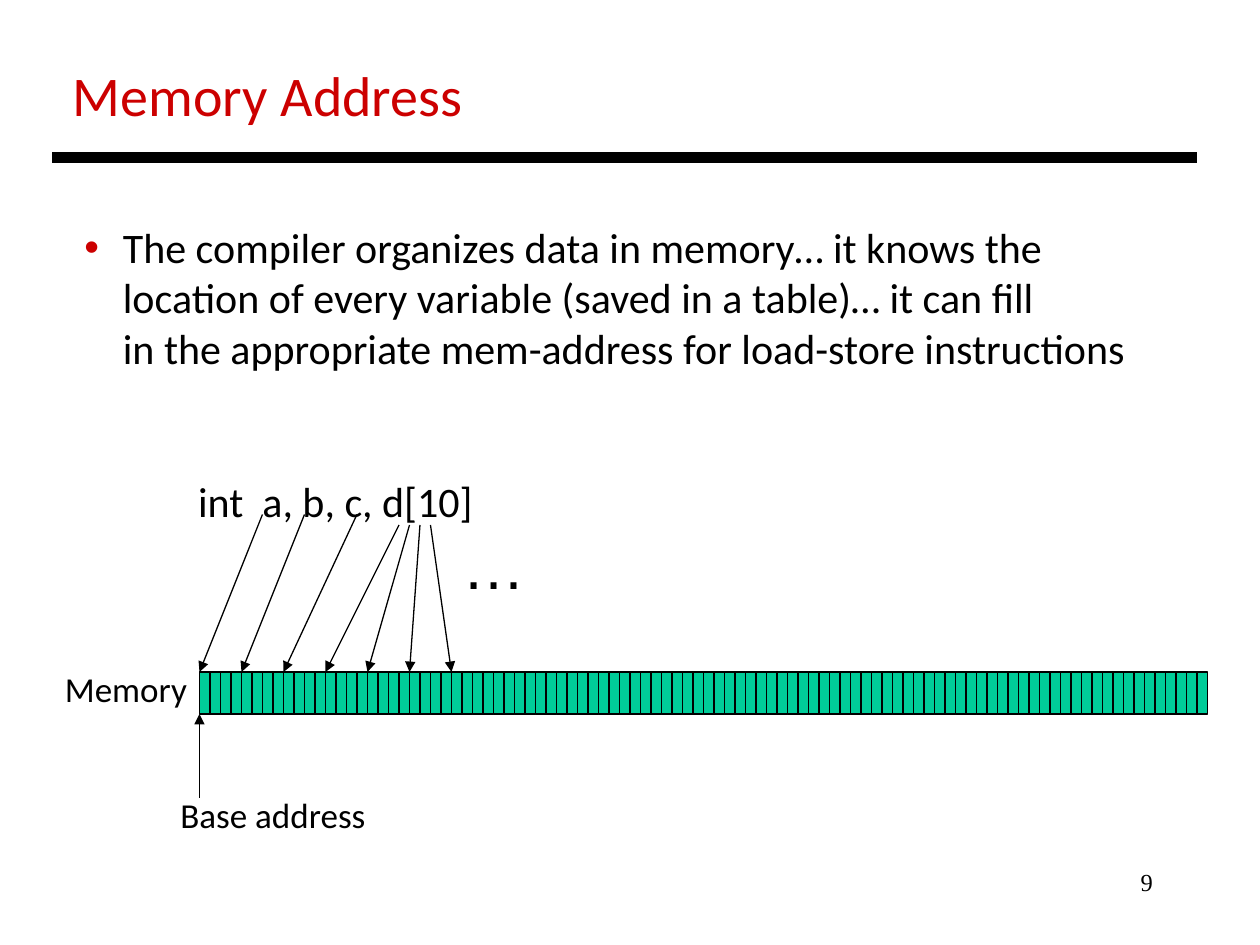
from lxml import etree
from pptx import Presentation
from pptx.dml.color import RGBColor
from pptx.enum.shapes import MSO_CONNECTOR, MSO_SHAPE
from pptx.enum.text import MSO_ANCHOR, MSO_AUTO_SIZE, PP_ALIGN
from pptx.oxml.ns import qn
from pptx.util import Pt

LINE = MSO_CONNECTOR.STRAIGHT
RECT = MSO_SHAPE.RECTANGLE
TOP = MSO_ANCHOR.TOP
FIXED = MSO_AUTO_SIZE.NONE
LEFT, RIGHT = PP_ALIGN.LEFT, PP_ALIGN.RIGHT
BLACK, RED, GREEN = "000000", "CC0000", "00CC99"

color = RGBColor.from_string


def write(box, area, lines, size, font="Calibri", ink=BLACK, align=LEFT):
    box.left, box.top, box.width, box.height = map(Pt, area)
    frame = box.text_frame
    frame.text = "\n".join(lines)
    frame.word_wrap = True
    frame.auto_size = FIXED
    frame.vertical_anchor = TOP
    for para in frame.paragraphs:
        para.alignment = align
        para.space_before = Pt(0)
        para.font.size = Pt(size)
        para.font.name = font
        para.font.color.rgb = color(ink)
    return frame.paragraphs


def draw(x1, y1, x2, y2, width=0.75, arrow=True):
    line = slide.shapes.add_connector(LINE, Pt(x1), Pt(y1), Pt(x2), Pt(y2))
    line.line.width = Pt(width)
    line.line.color.rgb = color(BLACK)
    if arrow:
        etree.SubElement(line.line._get_or_add_ln(), qn("a:tailEnd"), type="triangle")
    etree.SubElement(line._element.spPr, qn("a:effectLst"))


deck = Presentation()
deck.slide_width, deck.slide_height = Pt(720), Pt(540)
slide = deck.slides.add_slide(deck.slide_layouts[1])
title, body = slide.placeholders

# Title and rule
write(title, (34.5, 31, 239, 46), ["Memory Address"], 32, ink=RED)
draw(30, 90, 684, 90, width=6, arrow=False)

# Bullet and declaration
point, code = write(body, (41, 123, 614, 181.5), [
    "The compiler organizes data in memory… it knows the\v"
    "location of every variable (saved in a table)… it can fill\v"
    "in the appropriate mem-address for load-store instructions",
    "int  a, b, c, d[10]",
], 24)
code.space_before = Pt(58.5)
for para, margin, indent in ((point, 22, -22), (code, 65, 0)):
    props = para._p.get_or_add_pPr()
    props.set("marL", str(Pt(margin)))
    props.set("indent", str(Pt(indent)))
    if para is point:
        tint = etree.SubElement(props, qn("a:buClr"))
        etree.SubElement(tint, qn("a:srgbClr"), val=RED)
        etree.SubElement(props, qn("a:buChar"), char="•")
    else:
        etree.SubElement(props, qn("a:buNone"))
    # Bullet settings come before the default run settings
    fonts = props.find(qn("a:defRPr"))
    if fonts is not None:
        props.append(fonts)

# Memory cells
start, top, cell, high = 114, 384, 6, 24
for i in range(96):
    box = slide.shapes.add_shape(RECT, Pt(start + i * cell), Pt(top), Pt(cell), Pt(high))
    box.shadow.inherit = False
    box.fill.solid()
    box.fill.fore_color.rgb = color(GREEN)
    box.line.color.rgb = color(BLACK)
    box.line.width = Pt(0.75)

# Arrows from each variable to its word, four cells apart
for i, x in enumerate((150, 174, 204, 228, 234, 240, 246)):
    draw(x, 294 if i < 3 else 300, start + i * 4 * cell, top)
draw(start, 456, start, top + high)

# Labels and slide number
for text, area, size, font, align in (
    ("Memory", (30, 378, 86, 31), 20, "Calibri", LEFT),
    ("…", (257, 297.5, 51, 50), 36, "Arial", LEFT),
    ("Base address", (96, 450, 122, 31.5), 20, "Calibri", LEFT),
    ("9", (516, 492, 150, 36), 14, "Times New Roman", RIGHT),
):
    label = slide.shapes.add_textbox(0, 0, 0, 0)
    write(label, area, [text], size, font, align=align)

deck.save("out.pptx")
